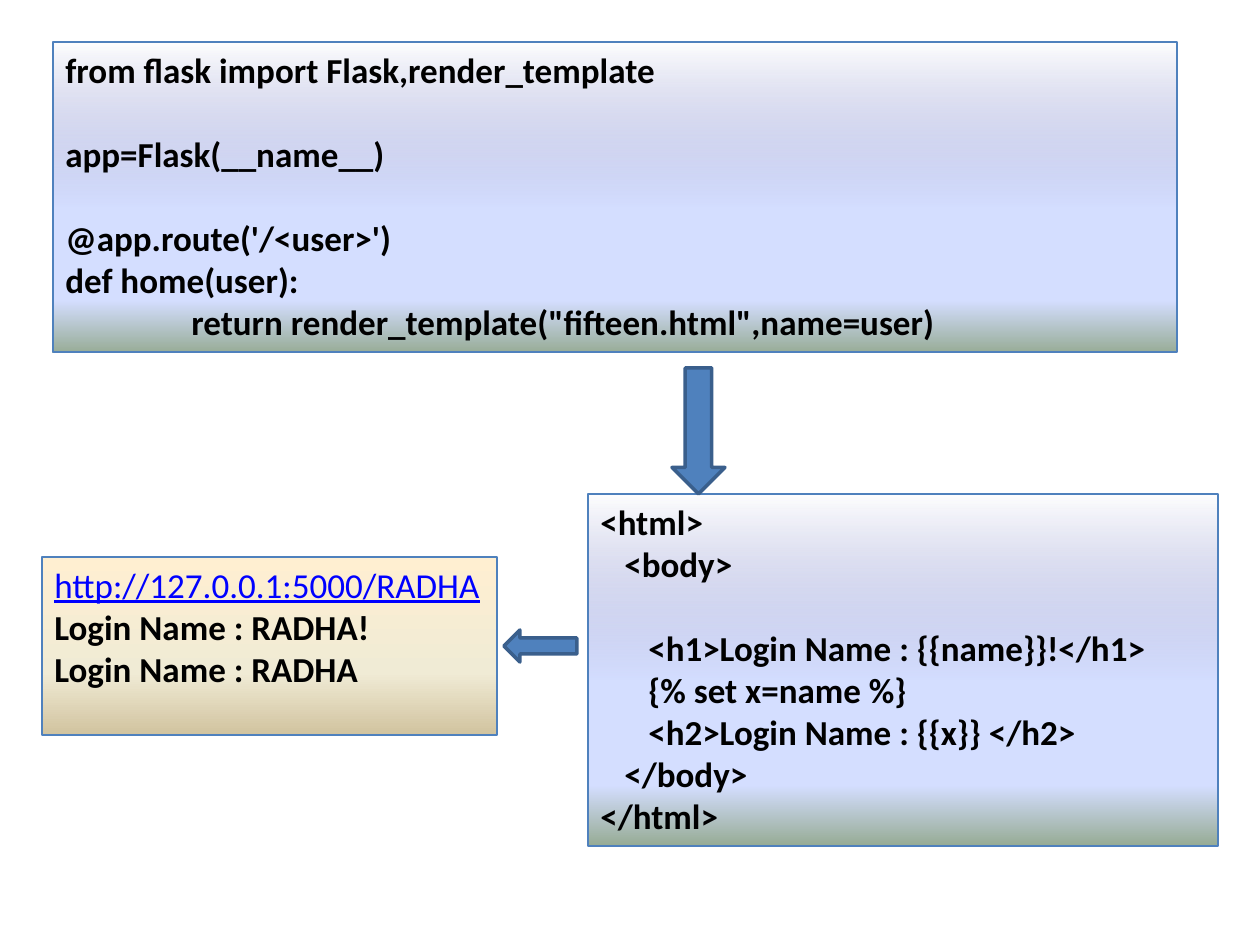
import pptx
import pptx.dml.color
import pptx.enum.shapes
import pptx.enum.text
import pptx.oxml
import pptx.oxml.ns
import pptx.util

RGBColor = pptx.dml.color.RGBColor
Shapes = pptx.enum.shapes.MSO_SHAPE

BLACK = RGBColor(0x00, 0x00, 0x00)
LINK_BLUE = RGBColor(0x00, 0x00, 0xFF)
ARROW_BLUE = RGBColor(0x4F, 0x81, 0xBD)
ARROW_EDGE = RGBColor(0x3A, 0x5F, 0x8C)
PERIWINKLE = RGBColor(0x84, 0x88, 0xC4)
PALE_BLUE = RGBColor(0xD4, 0xDE, 0xFF)
SAGE = RGBColor(0x96, 0xAB, 0x94)
CREAM = RGBColor(0xFF, 0xEF, 0xD1)
IVORY = RGBColor(0xF0, 0xEB, 0xD5)
SAND = RGBColor(0xD1, 0xC3, 0x9F)

CODE_GRADIENT = [(0, PERIWINKLE, 0), (53, PALE_BLUE, 100), (83, PALE_BLUE, 100), (100, SAGE, 100)]
BROWSER_GRADIENT = [(0, CREAM, 100), (65, IVORY, 100), (100, SAND, 100)]

LINE_GAP = 24
LINK = {"color": LINK_BLUE, "bold": False, "underline": True}

PANELS = [
    ((53, 42, 1124, 310), CODE_GRADIENT, [
        ("from flask import Flask,render_template", {}),
        ("app=Flask(__name__)", {"before": LINE_GAP}),
        ("@app.route('/<user>')", {"before": LINE_GAP}),
        ("def home(user):", {}),
        ('return render_template("fifteen.html",name=user)', {"indent": 126}),
    ]),
    ((588, 494, 630, 352), CODE_GRADIENT, [
        ("<html>", {}),
        ("<body>", {"indent": 24}),
        ("<h1>Login Name : {{name}}!</h1>", {"indent": 48, "before": LINE_GAP}),
        ("{% set x=name %}", {"indent": 48}),
        ("<h2>Login Name : {{x}} </h2>", {"indent": 48}),
        ("</body>", {"indent": 24}),
        ("</html>", {}),
    ]),
    ((42, 557, 455, 178), BROWSER_GRADIENT, [
        ("http://127.0.0.1:5000/RADHA", LINK),
        ("Login Name : RADHA!", {}),
        ("Login Name : RADHA", {}),
    ]),
]

ARROWS = [
    (Shapes.DOWN_ARROW, (672, 368, 53, 126)),
    (Shapes.LEFT_ARROW, (504, 630, 73, 32)),
]


def px(length):
    return pptx.util.Emu(round(length * 914400 / 126))


def set_gradient(shape, stops):
    stop_xml = "".join(
        f'<a:gs pos="{position * 1000}"><a:srgbClr val="{color}">'
        f'<a:alpha val="{opacity * 1000}"/></a:srgbClr></a:gs>'
        for position, color, opacity in stops
    )
    gradient = pptx.oxml.parse_xml(
        f'<a:gradFill {pptx.oxml.ns.nsdecls("a")} rotWithShape="1"><a:gsLst>{stop_xml}</a:gsLst>'
        '<a:lin ang="5400000" scaled="0"/></a:gradFill>'
    )
    shape.fill.background()
    properties = shape.fill._xPr
    properties.replace(properties.find(pptx.oxml.ns.qn("a:noFill")), gradient)


def write_text(paragraph, text, color=BLACK, bold=True, underline=False, indent=0, before=0):
    paragraph.space_before = pptx.util.Pt(before)
    paragraph._p.get_or_add_pPr().set("marL", str(px(indent)))
    run = paragraph.add_run()
    run.text = text
    run.font.name = "Calibri"
    run.font.size = pptx.util.Pt(20)
    run.font.bold = bold
    run.font.underline = underline
    run.font.color.rgb = color


def add_panel(slide, box, gradient, lines):
    shape = slide.shapes.add_textbox(*map(px, box))
    set_gradient(shape, gradient)
    shape.line.color.rgb = ARROW_BLUE
    shape.line.width = pptx.util.Pt(0.75)
    frame = shape.text_frame
    frame.word_wrap = True
    frame.auto_size = pptx.enum.text.MSO_AUTO_SIZE.NONE
    for index, (text, style) in enumerate(lines):
        paragraph = frame.add_paragraph() if index else frame.paragraphs[0]
        write_text(paragraph, text, **style)


def add_arrow(slide, kind, box):
    shape = slide.shapes.add_shape(kind, *map(px, box))
    shape.shadow.inherit = False
    shape.fill.solid()
    shape.fill.fore_color.rgb = ARROW_BLUE
    shape.line.color.rgb = ARROW_EDGE
    shape.line.width = pptx.util.Pt(2)


def main():
    presentation = pptx.Presentation()
    presentation.slide_width = px(1260)
    presentation.slide_height = px(945)
    slide = presentation.slides.add_slide(presentation.slide_layouts[6])
    for box, gradient, lines in PANELS:
        add_panel(slide, box, gradient, lines)
    for kind, box in ARROWS:
        add_arrow(slide, kind, box)
    presentation.save("out.pptx")


if __name__ == "__main__":
    main()
